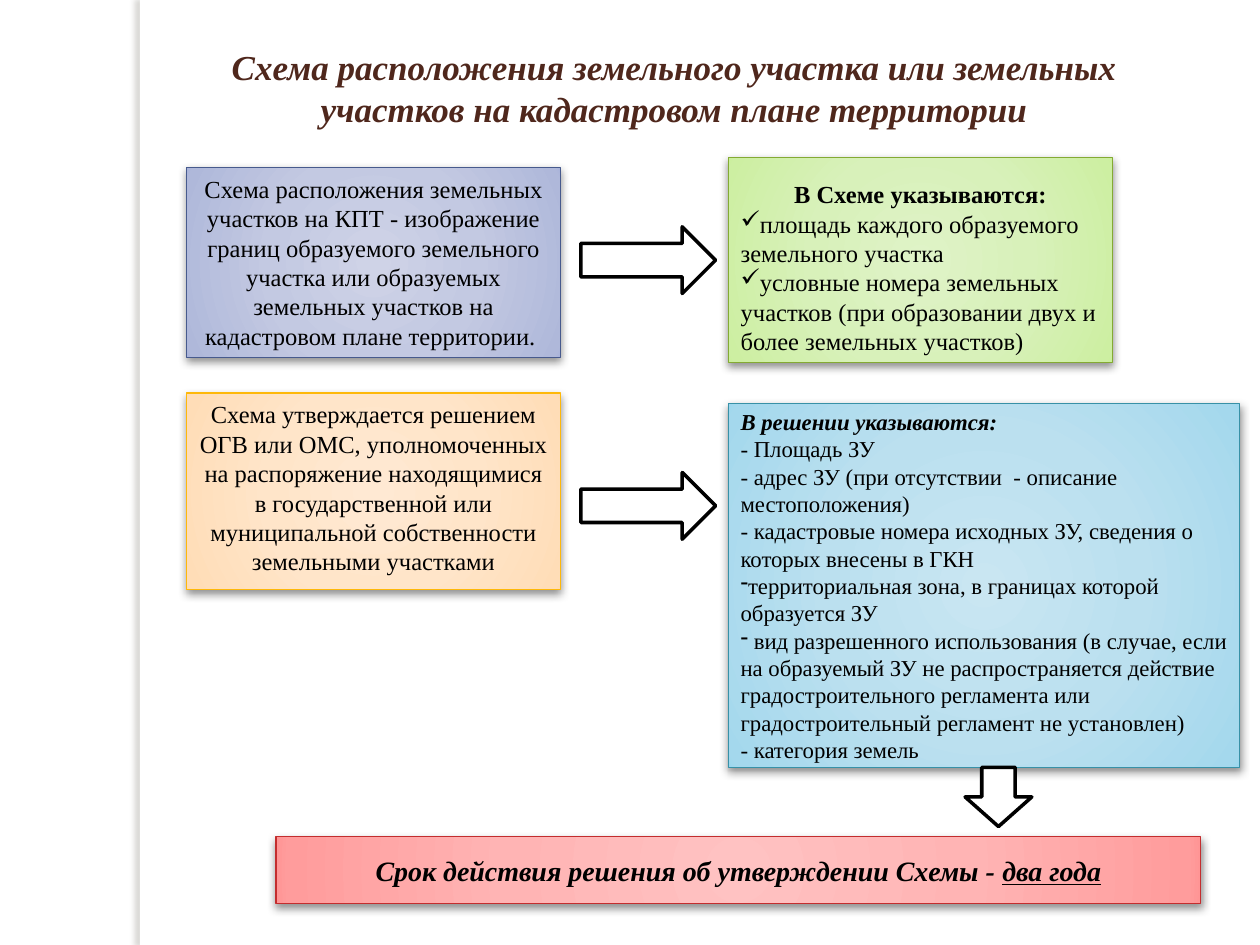
from lxml.etree import SubElement
from pptx import Presentation
from pptx.dml.color import RGBColor
from pptx.enum.shapes import MSO_SHAPE
from pptx.enum.text import MSO_ANCHOR, PP_ALIGN
from pptx.oxml import parse_xml
from pptx.oxml.ns import qn
from pptx.util import Inches, Pt

FONT = "Times New Roman"
NS = 'xmlns:a="http://schemas.openxmlformats.org/drawingml/2006/main"'
WIDE, HIGH = 10, 7.5
LEFT, RIGHT = 1.48, 5.78  # the two columns
STOPS = (0, 50, 97, 100)

# Content: a paragraph is a list of (text, style) runs plus a dict of its format
TITLE = [([("Схема расположения земельного участка или земельных участков "
            "на кадастровом плане территории", "bi")], {"mid": True})]
SCHEME = [([("Схема расположения земельных участков на КПТ - изображение границ "
             "образуемого земельного участка или образуемых земельных участков "
             "на кадастровом плане территории. ", "")], {"mid": True})]
APPROVAL = [([("Схема утверждается решением ОГВ или ОМС, уполномоченных на "
               "распоряжение находящимися в государственной или муниципальной "
               "собственности земельными участками", "")], {"mid": True})]
DETAILS = [
    ([("В Схеме указываются:", "b")], {"mid": True, "gap": 1.5}),
    ([("площадь каждого образуемого земельного участка", "")], {"mark": "✓"}),
    ([("условные номера земельных участков (при образовании двух и более "
       "земельных участков)", "")], {"mark": "✓"}),
]
DECISION = [
    ([("В решении указываются:", "bi")], {}),
    ([("- Площадь ЗУ", "")], {}),
    ([("- адрес ЗУ (при отсутствии  - описание местоположения)", "")], {}),
    ([("- кадастровые номера исходных ЗУ, сведения о которых внесены в ГКН", "")], {}),
    ([("территориальная зона, в границах которой образуется ЗУ", "")], {"mark": "-"}),
    ([(" вид разрешенного использования (в случае, если на образуемый ЗУ не "
       "распространяется действие градостроительного регламента или "
       "градостроительный регламент не установлен)", "")], {"mark": "-"}),
    ([("- категория земель", "")], {}),
]
TERM = [([("Срок действия решения об утверждении Схемы - ", "bi"),
          ("два года", "biu")], {"mid": True})]

# Box: place, gradient colours, line colour, text, size, anchor
TOP, MID = MSO_ANCHOR.TOP, MSO_ANCHOR.MIDDLE
BOXES = [
    ((LEFT, 1.33, 2.97, 1.51), "CFD3E7 C3C9E2 AFB8DA A8B2DA", "475A8D", SCHEME, 14, TOP),
    ((RIGHT, 1.25, 3.05, 1.63), "DFF3C7 D8F1BA CDEFA2 CAF199", "84AA33", DETAILS, 14, MID),
    ((LEFT, 3.12, 2.97, 1.56), "FFE9D3 FFE5C9 FFDDB7 FFDBB2", "FEB80A", APPROVAL, 14, TOP),
    ((2.19, 6.64, 7.34, 0.53), "FFC2C2 FFB4B4 FF9C9C FF9595", "C32D2E", TERM, 16, MID),
    ((RIGHT, 3.2, 4.06, 2.89), "C9E6F2 BBE0EF A4D8ED 9BD7EE", "3891A7", DECISION, 13, MID),
]
ARROWS = [
    (MSO_SHAPE.RIGHT_ARROW, (4.61, 1.8, 1.07, 0.53)),
    (MSO_SHAPE.RIGHT_ARROW, (4.61, 3.75, 1.07, 0.53)),
    (MSO_SHAPE.DOWN_ARROW, (7.66, 6.09, 0.53, 0.47)),
]


def rgb(code):
    return RGBColor.from_string(code)


def write(shape, paras, size=14, color="000000", anchor=TOP):
    frame = shape.text_frame
    frame.word_wrap = True
    frame.vertical_anchor = anchor
    for n, (runs, form) in enumerate(paras):
        para = frame.add_paragraph() if n else frame.paragraphs[0]
        para.alignment = PP_ALIGN.CENTER if form.get("mid") else PP_ALIGN.LEFT
        if "gap" in form:
            para.line_spacing = form["gap"]
        if "mark" in form:
            SubElement(para._p.get_or_add_pPr(), qn("a:buChar"), char=form["mark"])
        for text, style in runs:
            run = para.add_run()
            run.text = text
            font = run.font
            font.name, font.size = FONT, Pt(size)
            font.color.rgb = rgb(color)
            font.bold, font.italic = "b" in style, "i" in style
            font.underline = "u" in style


def draw(kind, place, fill="FFFFFF", line=None, width=0.75):
    shape = slide.shapes.add_shape(kind, *map(Inches, place))
    shape.fill.solid()
    shape.fill.fore_color.rgb = rgb(fill)
    if line:
        shape.line.color.rgb = rgb(line)
        shape.line.width = Pt(width)
    else:
        shape.line.fill.background()
    shape.shadow.inherit = False
    return shape


def glow(shape, colors):
    """Swap the plain fill for a gradient that spreads from the centre."""
    stops = "".join(f'<a:gs pos="{pos * 1000}"><a:srgbClr val="{code}"/></a:gs>'
                    for pos, code in zip(STOPS, colors))
    side = 'l="50000" t="50000" r="50000" b="50000"'
    grad = parse_xml(f'<a:gradFill {NS} rotWithShape="1"><a:gsLst>{stops}</a:gsLst>'
                     f'<a:path path="circle"><a:fillToRect {side}/></a:path></a:gradFill>')
    props = shape._element.spPr
    props.replace(props.find(qn("a:solidFill")), grad)


def shade(shape, color, alpha, blur, dist, angle):
    effects = shape._element.spPr.find(qn("a:effectLst"))
    effects.append(parse_xml(
        f'<a:outerShdw {NS} blurRad="{Pt(blur)}" dist="{Pt(dist)}" dir="{angle * 60000}" '
        f'algn="ctr" rotWithShape="0"><a:srgbClr val="{color}">'
        f'<a:alpha val="{alpha * 1000}"/></a:srgbClr></a:outerShdw>'))


deck = Presentation()
deck.slide_width, deck.slide_height = Inches(WIDE), Inches(HIGH)
slide = deck.slides.add_slide(deck.slide_layouts[6])

# Side strip
strip = draw(MSO_SHAPE.RECTANGLE, (1.11, 0, 0.08, HIGH))
shade(strip, "736F63", 25, 3, 3, 180)

# Title
title = slide.shapes.add_textbox(*map(Inches, (1.25, 0.31, 8.2, 0.77)))
write(title, TITLE, size=20, color="4F271C")

# Boxes
for place, colors, line, paras, size, anchor in BOXES:
    box = draw(MSO_SHAPE.RECTANGLE, place, line=line)
    glow(box, colors.split())
    shade(box, "000000", 43, 5, 2, 90)
    write(box, paras, size=size, anchor=anchor)

# Arrows
for kind, place in ARROWS:
    draw(kind, place, line="000000", width=2)

deck.save("out.pptx")
